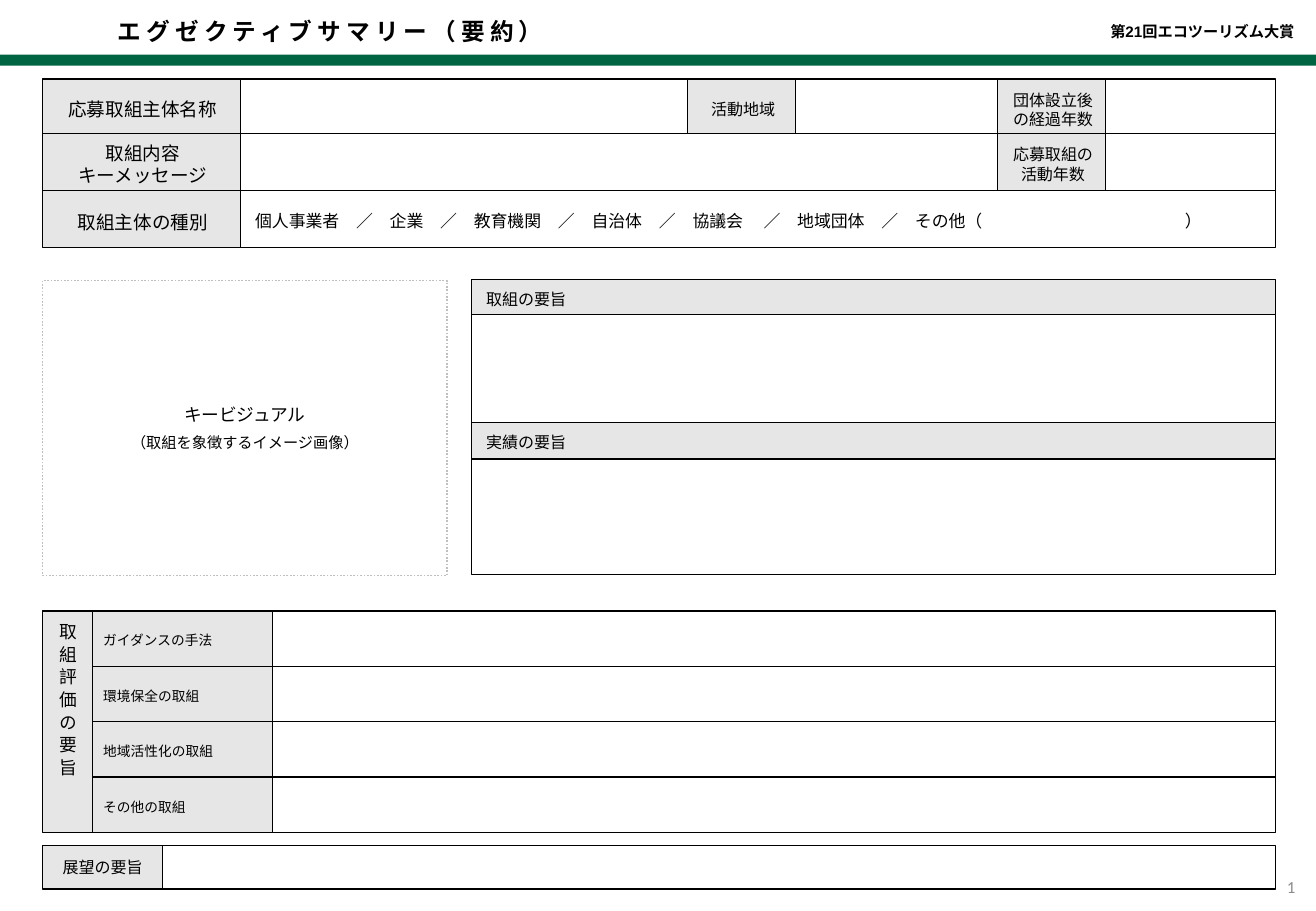
import dataclasses
from typing import Any

import lxml.etree
import pptx
import pptx.dml.color
import pptx.enum.dml
import pptx.enum.shapes
import pptx.enum.text
import pptx.oxml.ns
import pptx.util

Inches = pptx.util.Inches
Pt = pptx.util.Pt
Color = pptx.dml.color.RGBColor
Align = pptx.enum.text.PP_ALIGN
Anchor = pptx.enum.text.MSO_ANCHOR
qn = pptx.oxml.ns.qn

GREEN = Color(0x00, 0x64, 0x42)
BLACK = Color(0x00, 0x00, 0x00)
WHITE = Color(0xFF, 0xFF, 0xFF)
GREY = Color(0xE7, 0xE6, 0xE6)
DOT = Color(0xBF, 0xBF, 0xBF)
FAINT = Color(0x8C, 0x8C, 0x8C)

LEFT, RIGHT = 0.35, 10.5
PAD = (0.12, 0.08, 0.1, 0.05)


@dataclasses.dataclass
class Style:
    size: float = 9.5
    face: str = "Arial"
    bold: bool = False
    color: Color = BLACK
    align: Align = Align.CENTER
    anchor: Anchor = Anchor.MIDDLE
    pad: tuple[float, float, float, float] = PAD
    space: float = 0
    lead: float = 1.0


@dataclasses.dataclass
class Box:
    left: float
    top: float
    width: float
    height: float
    text: str = ""
    style: Style = dataclasses.field(default_factory=Style)


def assign(item: Any, form: dict[str, Any]) -> None:
    for name, value in form.items():
        setattr(item, name, value)


def place(shape: Any, box: Box) -> None:
    assign(shape, {name: Inches(getattr(box, name))
                   for name in ("left", "top", "width", "height")})


def write(shape: Any, text: str, style: Style) -> None:
    frame = shape.text_frame
    sides = ("margin_left", "margin_top", "margin_right", "margin_bottom")
    assign(frame, {side: Inches(pad) for side, pad in zip(sides, style.pad)})
    assign(frame, {"word_wrap": True, "vertical_anchor": style.anchor,
                   "auto_size": pptx.enum.text.MSO_AUTO_SIZE.NONE})
    for num, line in enumerate(text.split("\n")):
        para = frame.add_paragraph() if num else frame.paragraphs[0]
        assign(para, {"alignment": style.align, "line_spacing": style.lead})
        run = para.add_run()
        run.text = line
        assign(run.font, {"size": Pt(style.size), "name": style.face,
                          "bold": style.bold})
        run.font.color.rgb = style.color
        if style.space:
            run._r.get_or_add_rPr().set("spc", str(round(style.space * 100)))


def draw(slide: Any, box: Box, line: Color | None = BLACK,
         fill: Color | None = None) -> Any:
    """Labelled cells are grey and empty cells white unless told otherwise."""
    shape = slide.shapes.add_shape(
        pptx.enum.shapes.MSO_SHAPE.RECTANGLE, 0, 0, 0, 0)
    place(shape, box)
    shape.shadow.inherit = False
    shape.fill.solid()
    shape.fill.fore_color.rgb = fill or (GREY if box.text else WHITE)
    if line is None:
        shape.line.fill.background()
    else:
        shape.line.color.rgb = line
        shape.line.width = Pt(0.75)
    if box.text:
        write(shape, box.text, box.style)
    return shape


def label(slide: Any, box: Box) -> Any:
    shape = slide.shapes.add_textbox(0, 0, 0, 0)
    place(shape, box)
    write(shape, box.text, box.style)
    return shape


def head(slide: Any) -> None:
    draw(slide, Box(0, 0.45, 10.83, 0.09), None, GREEN)
    title = slide.shapes.title
    place(title, Box(0.89, 0.16, 4.53, 0.27))
    write(title, "エグゼクティブサマリー（要約）",
          Style(14, bold=True, align=Align.LEFT, anchor=Anchor.BOTTOM,
                pad=(0.08, 0.08, 0.1, 0.05), space=3, lead=0.9))
    label(slide, Box(8.55, 0.15, 2.2, 0.27, "第21回エコツーリズム大賞",
                     Style(9, bold=True, align=Align.RIGHT,
                           anchor=Anchor.BOTTOM,
                           pad=(0.1, 0.08, 0.1, 0.08), lead=0.9)))


def profile(slide: Any) -> None:
    big, small = Style(11), Style()
    high = 0.47
    rows = (
        (0.65, (0.35, 1.98, 5.66, 6.55, 8.21, 9.1, RIGHT),
         (("応募取組主体名称", big), ("", small), ("活動地域", small),
          ("", small), ("団体設立後の経過年数", small), ("", small))),
        (1.1, (0.35, 1.98, 8.21, 9.1, RIGHT),
         (("取組内容\nキーメッセージ", big), ("", small),
          ("応募取組の活動年数", small), ("", small))),
        (1.57, (0.35, 1.98),
         (("取組主体の種別", Style(11, pad=(0.12, 0.1, 0.1, 0.05))),)),
    )
    for top, edges, cells in rows:
        for left, right, (text, style) in zip(edges, edges[1:], cells):
            draw(slide, Box(left, top, right - left, high, text, style))

    # The tab leaves room to write before the closing bracket
    kinds = ("個人事業者　／　企業　／　教育機関　／　自治体　／　協議会　 ／　"
             "地域団体　／　その他（\t）")
    shape = draw(slide, Box(1.98, 1.57, RIGHT - 1.98, high, kinds,
                            Style(10, align=Align.LEFT,
                                  pad=(0.12, 0.07, 0.1, 0.05))), fill=WHITE)
    props = shape.text_frame.paragraphs[0]._p.get_or_add_pPr()
    tabs = lxml.etree.SubElement(props, qn("a:tabLst"))
    lxml.etree.SubElement(tabs, qn("a:tab"), pos=str(Inches(7.65)), algn="l")


def visual(slide: Any) -> None:
    shape = draw(slide, Box(
        LEFT, 2.31, 3.33, 2.43,
        "キービジュアル\n（取組を象徴するイメージ画像）",
        Style(10.5, pad=(0.1, 0.05, 0.1, 0.05))), DOT, WHITE)
    assign(shape.line, {"width": Pt(1),
                        "dash_style": pptx.enum.dml.MSO_LINE.ROUND_DOT})
    first, note = shape.text_frame.paragraphs
    first.space_after = Pt(2.4)
    assign(note, {"space_before": Pt(2.4), "space_after": Pt(2.4)})
    note.runs[0].font.size = Pt(9)


def gist(slide: Any) -> None:
    style = Style(align=Align.LEFT, anchor=Anchor.TOP)
    edges = (2.3, 2.59, 3.48, 3.78, 4.73)
    texts = ("取組の要旨", "", "実績の要旨", "")
    for top, end, text in zip(edges, edges[1:], texts):
        draw(slide, Box(3.88, top, RIGHT - 3.88, end - top, text, style))


def review(slide: Any) -> None:
    top, step = 5.03, 0.456
    style = Style(8.1, "Calibri", align=Align.LEFT,
                  pad=(0.1, 0.08, 0.1, 0.05))
    names = ("ガイダンスの手法", "環境保全の取組", "地域活性化の取組",
             "その他の取組")
    for num, name in enumerate(names):
        row = top + num * step
        draw(slide, Box(0.75, row, 1.49, step, name, style))
        draw(slide, Box(2.24, row, RIGHT - 2.24, step))
    side = draw(slide, Box(LEFT, top, 0.41, step * len(names),
                           "取組評価の要旨",
                           Style(10.5, "Calibri", space=3,
                                 pad=(0.1, 0.05, 0.1, 0.05))))
    side.text_frame._txBody.bodyPr.set("vert", "eaVert")


def foot(slide: Any) -> None:
    draw(slide, Box(LEFT, 6.96, 0.99, 0.36, "展望の要旨",
                    Style(pad=(0.1, 0, 0.1, 0))))
    draw(slide, Box(1.34, 6.96, RIGHT - 1.34, 0.36))
    # Page number as a live field
    page = label(slide, Box(10.13, 7.1, 0.63, 0.4, "1",
                            Style(10, "Calibri", color=FAINT,
                                  align=Align.RIGHT,
                                  pad=(0.1, 0.05, 0.1, 0.05))))
    run = page.text_frame.paragraphs[0].runs[0]._r
    field = lxml.etree.Element(
        qn("a:fld"), id="{B6F15528-21DE-4FAA-801E-634DDDAF4B2B}",
        type="slidenum")
    run.getparent().replace(run, field)
    field.extend(list(run))


def main() -> None:
    deck = pptx.Presentation()
    assign(deck, {"slide_width": Inches(10.83), "slide_height": Inches(7.5)})
    slide = deck.slides.add_slide(deck.slide_layouts[5])
    for part in (head, profile, visual, gist, review, foot):
        part(slide)
    deck.save("out.pptx")


if __name__ == "__main__":
    main()
